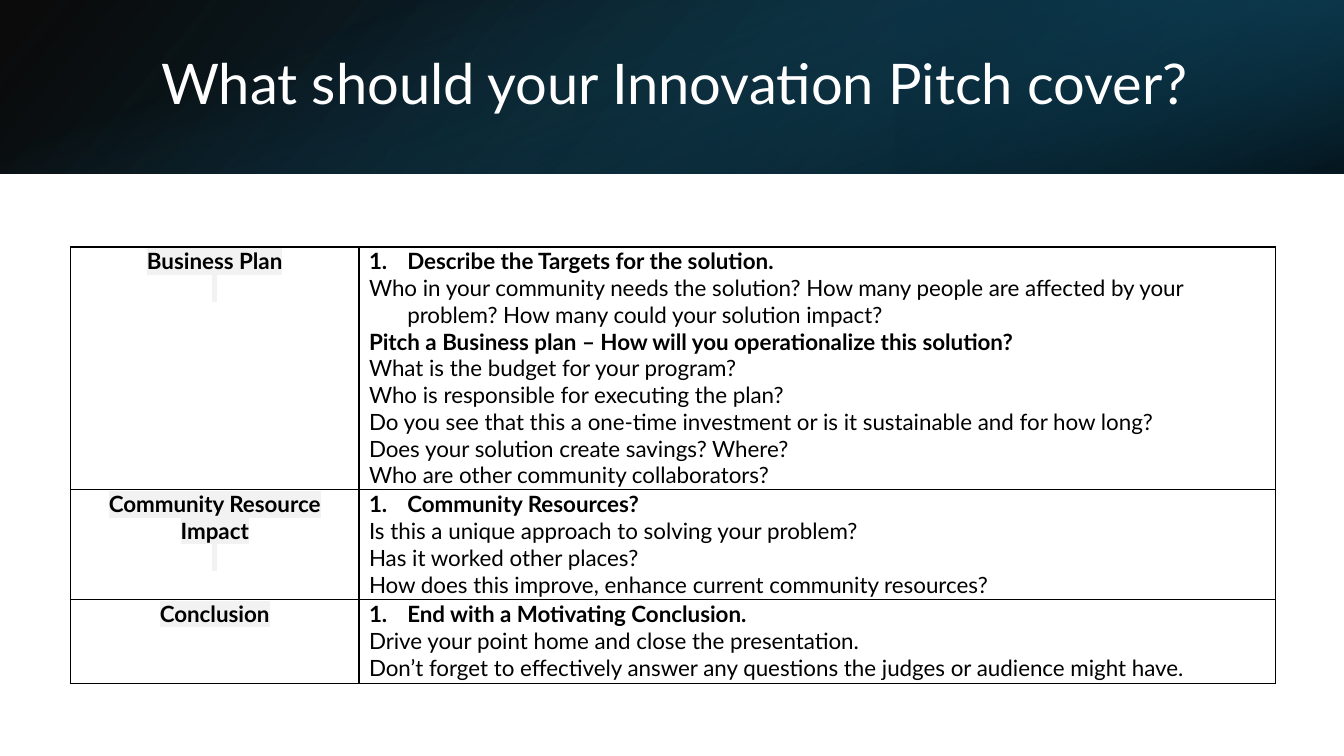
from lxml import etree
from pptx import Presentation
from pptx.dml.color import RGBColor
from pptx.enum.shapes import MSO_SHAPE
from pptx.enum.text import MSO_ANCHOR, PP_ALIGN
from pptx.oxml.ns import qn
from pptx.util import Inches, Pt

RECT = MSO_SHAPE.RECTANGLE
MIDDLE, CENTER = MSO_ANCHOR.MIDDLE, PP_ALIGN.CENTER
FONT, BLACK, WHITE, SHADE = "Lato", "000000", "FFFFFF", "F2F2F2"
WIDTH, HEIGHT, BAND = 13.33, 7.5, 1.72
INDENT = 0.38

TITLE = "What should your Innovation Pitch cover?"
NUMBERED, BOLD, PLAIN = "numbered", "bold", "plain"
ROWS = [
    (2.39, ["Business Plan", " "], [
        (NUMBERED, "Describe the Targets for the solution."),
        (PLAIN, "Who in your community needs the solution? How many people are "
                "affected by your problem? How many could your solution impact?"),
        (BOLD, "Pitch a Business plan – How will you operationalize this solution?"),
        (PLAIN, "What is the budget for your program?"),
        (PLAIN, "Who is responsible for executing the plan?"),
        (PLAIN, "Do you see that this a one-time investment or is it sustainable "
                "and for how long?"),
        (PLAIN, "Does your solution create savings? Where?"),
        (PLAIN, "Who are other community collaborators?"),
    ]),
    (1.09, ["Community Resource Impact", " "], [
        (NUMBERED, "Community Resources?"),
        (PLAIN, "Is this a unique approach to solving your problem?"),
        (PLAIN, "Has it worked other places?"),
        (PLAIN, "How does this improve, enhance current community resources?"),
    ]),
    (0.83, ["Conclusion"], [
        (NUMBERED, "End with a Motivating Conclusion."),
        (PLAIN, "Drive your point home and close the presentation."),
        (PLAIN, "Don’t forget to effectively answer any questions the judges or "
                "audience might have."),
    ]),
]
COLUMNS = [2.86, 9.09]

# (box, rotation, flipped, angle, [(position, colour, opacity)])
BANNER = [
    ((0, 0, WIDTH, BAND), 0, True, 140,
     [(0, "000000", 96), (100, "104862", 100)]),
    ((WIDTH * 2 / 3, 0, WIDTH / 3, BAND), 180, True, 320,
     [(19, "0B3041", 68), (100, "156082", 79)]),
    (((WIDTH - BAND) / 2, (BAND - WIDTH) / 2, BAND, WIDTH), 90, False, 340,
     [(23, "156082", 0), (99, "000000", 74)]),
]


def rgb(value):
    """Turn a hex string into a colour."""
    return RGBColor.from_string(value)


def child(parent, tag, **attrs):
    """Append a DrawingML element with the given attributes."""
    return etree.SubElement(parent, qn("a:" + tag),
                            {k: str(v) for k, v in attrs.items()})


def add_banner_layer(slide, box, rotation, flipped, angle, stops):
    """Add one gradient rectangle of the banner."""
    sp = slide.shapes.add_shape(RECT, *map(Inches, box))
    sp.shadow.inherit = False
    sp.rotation = rotation
    sp.line.fill.background()
    sp.fill.gradient()
    if flipped:
        sp.element.spPr.find(qn("a:xfrm")).set("flipH", "1")
    grad = sp.element.spPr.find(qn("a:gradFill"))
    for old in list(grad):
        grad.remove(old)
    gs_list = child(grad, "gsLst")
    for position, color, opacity in stops:
        gs = child(gs_list, "gs", pos=position * 1000)
        child(child(gs, "srgbClr", val=color), "alpha", val=opacity * 1000)
    child(grad, "lin", ang=angle * 60000, scaled=0)


def add_run(p, text, size, color, bold=False, highlight=None):
    """Add a formatted run to a paragraph."""
    r = p.add_run()
    r.text = text
    r.font.size, r.font.name, r.font.bold = Pt(size), FONT, bold
    r.font.color.rgb = rgb(color)
    if highlight:
        mark = etree.Element(qn("a:highlight"))
        child(mark, "srgbClr", val=highlight)
        r.font._element.find(qn("a:solidFill")).addnext(mark)


def format_cell(cell):
    """Set the margins and the black border of a cell."""
    cell.margin_left = cell.margin_right = Inches(0.1)
    cell.margin_top, cell.margin_bottom = Inches(0.01), 0
    tc_pr = cell._tc.get_or_add_tcPr()
    for side in ("lnL", "lnR", "lnT", "lnB"):
        ln = child(tc_pr, side, w=Pt(1))
        child(child(ln, "solidFill"), "srgbClr", val=BLACK)


def paragraphs(tf, count):
    """Return the given number of paragraphs of a text frame."""
    return [tf.paragraphs[0]] + [tf.add_paragraph() for _ in range(count - 1)]


def fill_topic(cell, lines):
    """Write the centred topic in the left column."""
    format_cell(cell)
    cell.fill.solid()
    cell.fill.fore_color.rgb = rgb(WHITE)
    for p, text in zip(paragraphs(cell.text_frame, len(lines)), lines):
        p.alignment = CENTER
        add_run(p, text, 16, BLACK, True, SHADE)


def fill_questions(cell, items):
    """Write the hanging-indent questions in the right column."""
    format_cell(cell)
    cell.fill.background()
    for p, (kind, text) in zip(paragraphs(cell.text_frame, len(items)), items):
        p_pr = p._p.get_or_add_pPr()
        p_pr.set("marL", str(Inches(INDENT)))
        p_pr.set("indent", str(-Inches(INDENT)))
        if kind == NUMBERED:
            child(p_pr, "buFont", typeface="+mj-lt")
            child(p_pr, "buAutoNum", type="arabicPeriod")
        else:
            child(p_pr, "buNone")
        add_run(p, text, 16, BLACK, kind != PLAIN)


def add_title(slide):
    """Add the title over the banner."""
    sp = slide.shapes.add_textbox(*map(Inches, (1.5, 0.38, 10.98, 0.96)))
    tf = sp.text_frame
    tf.word_wrap, tf.vertical_anchor = True, MIDDLE
    p = tf.paragraphs[0]
    p.line_spacing = 0.9
    add_run(p, TITLE, 40, WHITE)


def add_topics(slide):
    """Add the table of pitch topics."""
    height = sum(row[0] for row in ROWS)
    box = map(Inches, (0.7, 2.45, sum(COLUMNS), height))
    table = slide.shapes.add_table(len(ROWS), len(COLUMNS), *box).table
    table.first_row = table.horz_banding = False
    for column, width in zip(table.columns, COLUMNS):
        column.width = Inches(width)
    for row, (row_height, topic, items) in zip(table.rows, ROWS):
        row.height = Inches(row_height)
        fill_topic(row.cells[0], topic)
        fill_questions(row.cells[1], items)


def main():
    """Build the slide and save it."""
    prs = Presentation()
    prs.slide_width, prs.slide_height = Inches(WIDTH), Inches(HEIGHT)
    slide = prs.slides.add_slide(prs.slide_layouts[6])
    for layer in BANNER:
        add_banner_layer(slide, *layer)
    add_title(slide)
    add_topics(slide)
    prs.save("out.pptx")


if __name__ == "__main__":
    main()
